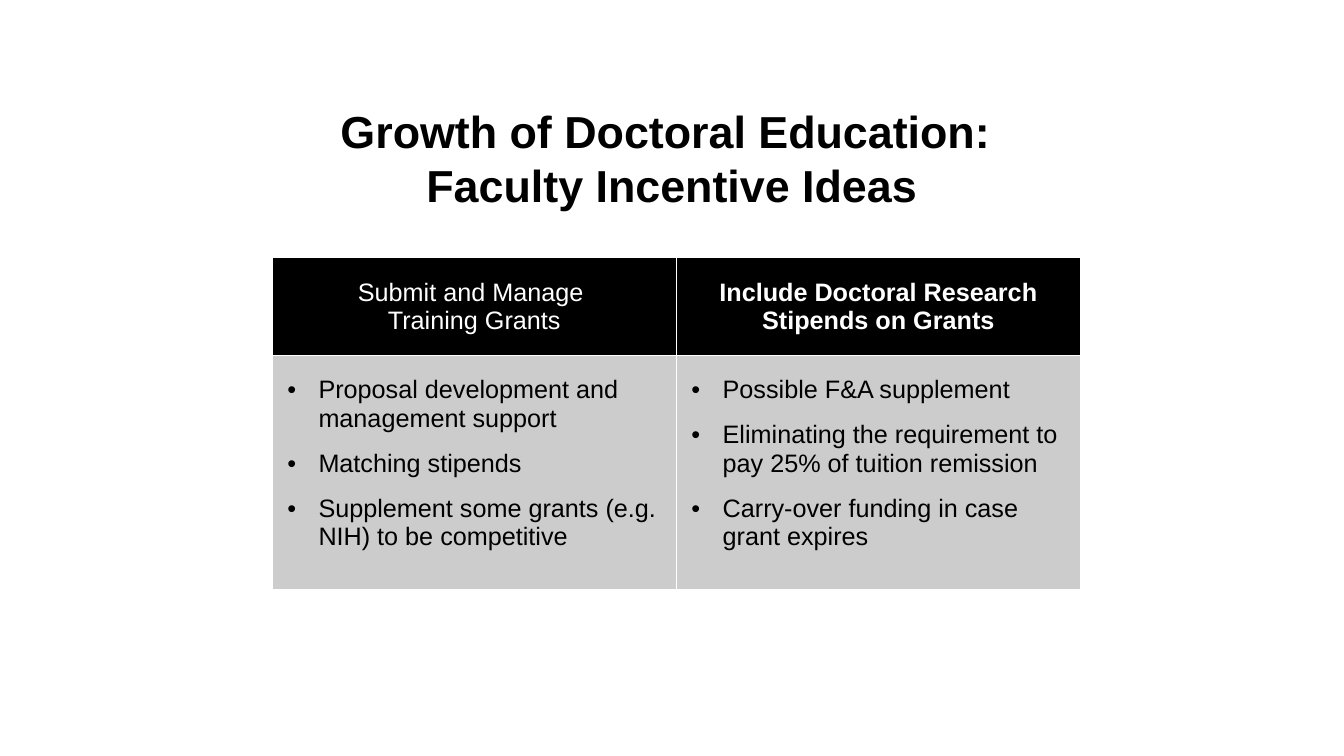
from dataclasses import dataclass

from lxml.etree import SubElement
from pptx import Presentation
from pptx.dml.color import RGBColor as Color
from pptx.enum.text import MSO_ANCHOR as Anchor, MSO_AUTO_SIZE as AutoSize, PP_ALIGN as Align
from pptx.oxml import parse_xml
from pptx.oxml.ns import nsdecls, qn
from pptx.util import Emu, Inches, Pt


@dataclass(frozen=True)
class Theme:
    font: str = "Arial"
    dark: str = "000000"
    light: str = "FFFFFF"
    panel: str = "CCCCCC"
    title_size: int = 32
    table_size: int = 18
    bullet_gap: int = 12
    bullet_indent: float = 0.31
    border: int = 1


class SlideBuilder:
    """Builds slide elements on a grid of 40 columns and 30 rows."""

    def __init__(self, deck, theme):
        self.theme = theme
        self.page = deck.slides.add_slide(deck.slide_layouts[5])
        self.column = deck.slide_width / 40
        self.row = deck.slide_height / 30

    def across(self, columns):
        return Emu(round(columns * self.column))

    def down(self, rows):
        return Emu(round(rows * self.row))

    def span(self, para, text, size, color, bold=False):
        span = para.add_run()
        span.text = text
        span.font.name = self.theme.font
        span.font.size = Pt(size)
        span.font.bold = bold
        span.font.color.rgb = Color.from_string(color)

    def title(self, lines, left, top, width, height):
        box = self.page.shapes.title
        box.left, box.top = self.across(left), self.down(top)
        box.width, box.height = self.across(width), self.down(height)
        frame = box.text_frame
        frame.auto_size = AutoSize.NONE
        frame.vertical_anchor = Anchor.MIDDLE
        para = frame.paragraphs[0]
        para.alignment = Align.CENTER
        size = self.theme.title_size
        for index, line in enumerate(lines):
            if index:
                para.add_line_break()
                SubElement(para._p[-1], qn("a:rPr"), sz=str(size * 100))
            self.span(para, line, size, self.theme.dark, True)

    def table(self, topics, left, top, width, heights):
        table = self.page.shapes.add_table(
            2, len(topics), self.across(left), self.down(top),
            self.across(width), self.down(sum(heights))).table
        for row, height in zip(table.rows, heights):
            row.height = self.down(height)
        for index, (heading, bold, ideas) in enumerate(topics):
            self.header_cell(table.cell(0, index), heading, bold)
            self.body_cell(table.cell(1, index), ideas)

    def paint_cell(self, cell, fill):
        cell.fill.solid()
        cell.fill.fore_color.rgb = Color.from_string(fill)
        properties = cell._tc.get_or_add_tcPr()
        for index, side in enumerate("LRTB"):
            properties.insert(index, parse_xml(
                f'<a:ln{side} {nsdecls("a")} w="{Pt(self.theme.border)}"><a:solidFill>'
                f'<a:srgbClr val="{self.theme.light}"/></a:solidFill></a:ln{side}>'))

    def paragraphs(self, frame, lines):
        for index, line in enumerate(lines):
            yield (frame.add_paragraph() if index else frame.paragraphs[0]), line

    def header_cell(self, cell, lines, bold):
        self.paint_cell(cell, self.theme.dark)
        cell.vertical_anchor = Anchor.MIDDLE
        for para, line in self.paragraphs(cell.text_frame, lines):
            para.alignment = Align.CENTER
            self.span(para, line, self.theme.table_size, self.theme.light, bold)

    def body_cell(self, cell, ideas):
        self.paint_cell(cell, self.theme.panel)
        cell.vertical_anchor = Anchor.TOP
        cell.margin_left = cell.margin_right = cell.margin_bottom = Inches(0.15)
        cell.margin_top = Inches(0.2)
        for para, idea in self.paragraphs(cell.text_frame, ideas):
            self.bullet(para)
            para.space_after = Pt(self.theme.bullet_gap)
            self.span(para, idea, self.theme.table_size, self.theme.dark)

    def bullet(self, para):
        properties = para._p.get_or_add_pPr()
        indent = Inches(self.theme.bullet_indent)
        properties.set("marL", str(indent))
        properties.set("indent", str(-indent))
        SubElement(properties, qn("a:buFont"), typeface=self.theme.font)
        SubElement(properties, qn("a:buChar"), char="•")


def main():
    deck = Presentation()
    deck.slide_width, deck.slide_height = Inches(13.33), Inches(7.5)
    slide = SlideBuilder(deck, Theme())
    slide.title(["Growth of Doctoral Education: ", "Faculty Incentive Ideas"],
                left=2, top=3.92, width=36, height=4.68)
    topics = [
        (["Submit and Manage ", "Training Grants"], False,
         ["Proposal development and management support",
          "Matching stipends",
          "Supplement some grants (e.g. NIH) to be competitive"]),
        (["Include Doctoral Research Stipends on Grants"], True,
         ["Possible F&A supplement",
          "Eliminating the requirement to pay 25% of tuition remission",
          "Carry-over funding in case grant expires"]),
    ]
    slide.table(topics, left=8.1, top=10.2, width=24.06, heights=(3.92, 9.26))
    deck.save("out.pptx")


if __name__ == "__main__":
    main()
